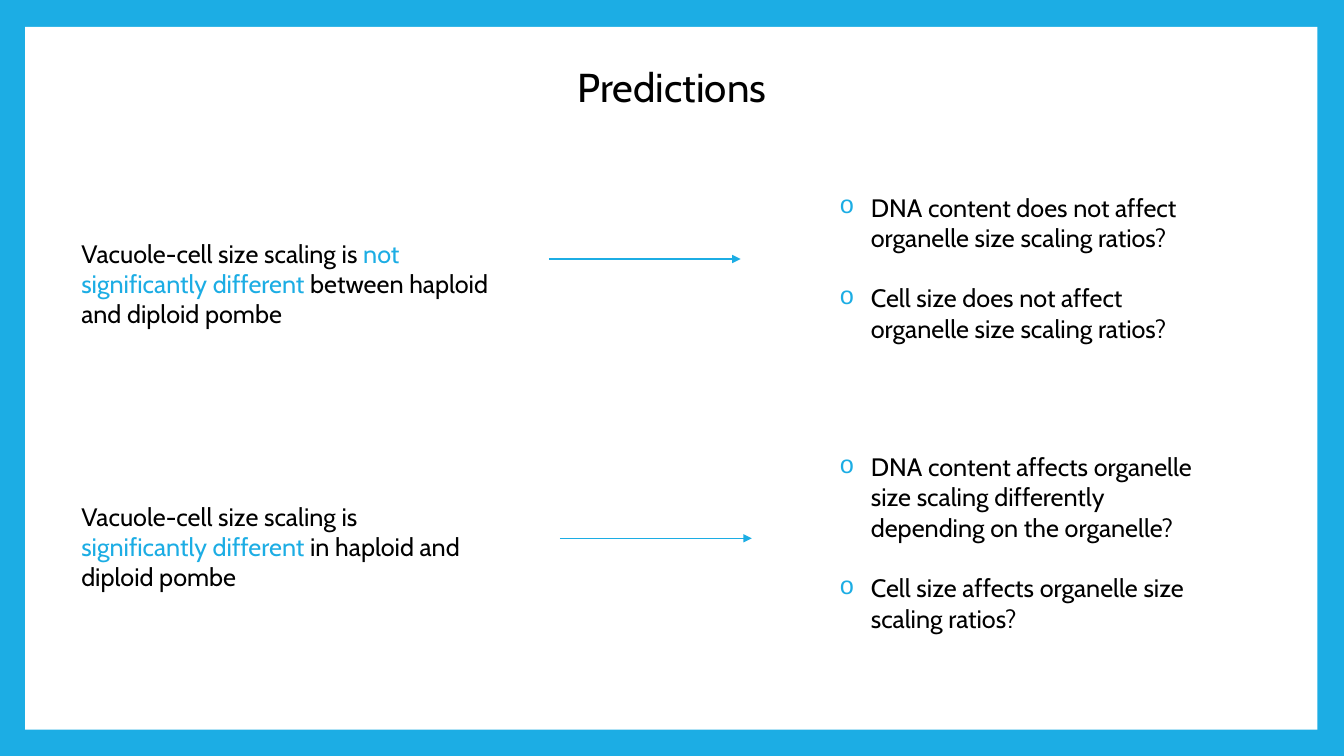
from lxml import etree
from pptx import Presentation
from pptx.dml.color import RGBColor
from pptx.enum import shapes, text
from pptx.oxml import ns
from pptx.util import Pt

BLUE, BLACK, WHITE = "1CADE4", "000000", "FFFFFF"
rgb = RGBColor.from_string


def add_text(slide, box, paragraphs, size=18, align=text.PP_ALIGN.LEFT,
             anchor=text.MSO_ANCHOR.TOP, spacing=None, bullet=None, gap=0):
    """Each paragraph is a list of (wording, colour) runs."""
    frame = slide.shapes.add_textbox(*map(Pt, box)).text_frame
    frame.word_wrap = True
    frame.vertical_anchor = anchor
    for index, runs in enumerate(paragraphs):
        para = frame.add_paragraph() if index else frame.paragraphs[0]
        para.alignment = align
        para.line_spacing = spacing
        para.space_before = Pt(gap if index else 0)
        for wording, colour in runs:
            run = para.add_run()
            run.text = wording
            run.font.name = "Cabin"
            run.font.size = Pt(size)
            run.font.color.rgb = rgb(colour)
        if bullet:
            props = para._p.get_or_add_pPr()
            props.set("marL", str(Pt(22.5)))
            props.set("indent", str(Pt(-22.5)))
            bullet_colour = etree.SubElement(props, ns.qn("a:buClr"))
            etree.SubElement(bullet_colour, ns.qn("a:srgbClr"), val=BLUE)
            etree.SubElement(props, ns.qn("a:buFont"), typeface="Courier New")
            etree.SubElement(props, ns.qn("a:buChar"), char=bullet)


deck = Presentation()
deck.slide_width, deck.slide_height = Pt(960), Pt(540)
slide = deck.slides.add_slide(deck.slide_layouts[6])

# Blue frame around a white panel
slide.background.fill.solid()
slide.background.fill.fore_color.rgb = rgb(BLUE)
panel = slide.shapes.add_shape(shapes.MSO_SHAPE.RECTANGLE,
                               Pt(18), Pt(19.2), Pt(923), Pt(502))
panel.shadow.inherit = False
panel.fill.solid()
panel.fill.fore_color.rgb = rgb(WHITE)
panel.line.fill.background()

# Title
add_text(slide, (201, 44.5, 558, 39), [[("Predictions", BLACK)]], size=28.8,
         align=text.PP_ALIGN.CENTER, anchor=text.MSO_ANCHOR.MIDDLE, spacing=0.9)

# Each prediction: finding box, finding, arrow start, implications box, implications
predictions = [
    ((51, 166.5, 317, 73),
     [("Vacuole-cell size scaling is ", BLACK),
      ("not significantly different ", BLUE),
      ("between haploid and diploid pombe", BLACK)],
     (392, 185),
     (592.5, 133.5, 279.5, 138),
     ["DNA content does not affect organelle size scaling ratios?",
      "Cell size does not affect organelle size scaling ratios?"]),
    ((51, 354.5, 299.5, 73),
     [("Vacuole-cell size scaling is", BLACK),
      (" significantly different ", BLUE),
      ("in haploid and diploid pombe", BLACK)],
     (400, 384.5),
     (592.5, 319, 279.5, 160),
     ["DNA content affects organelle size scaling differently "
      "depending on the organelle?",
      "Cell size affects organelle size scaling ratios?"]),
]
ARROW_LENGTH = 137

for finding_box, finding, (x, y), implications_box, implications in predictions:
    add_text(slide, finding_box, [finding])

    # Arrow from finding to implications
    arrow = slide.shapes.add_connector(shapes.MSO_CONNECTOR.STRAIGHT,
                                       Pt(x), Pt(y), Pt(x + ARROW_LENGTH), Pt(y))
    arrow.line.color.rgb = rgb(BLUE)
    arrow.line.width = Pt(0.79)
    etree.SubElement(arrow.line._get_or_add_ln(), ns.qn("a:tailEnd"), type="triangle")
    etree.SubElement(arrow._element.spPr, ns.qn("a:effectLst"))

    add_text(slide, implications_box, [[(line, BLACK)] for line in implications],
             bullet="o", gap=21.7)

deck.save("out.pptx")
